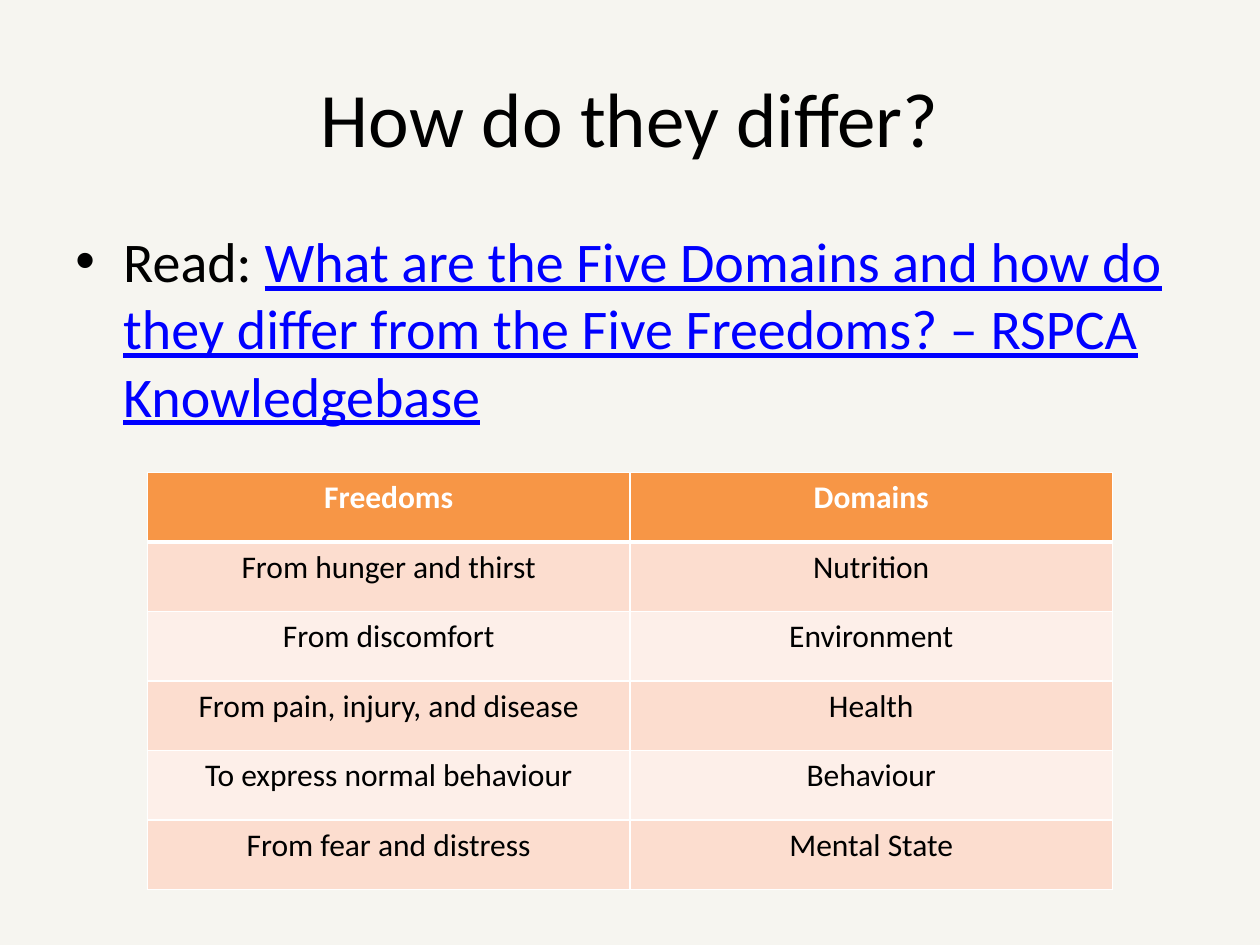
"""Build the slide comparing the Five Freedoms with the Five Domains."""
from dataclasses import dataclass

from lxml import etree
from pptx import Presentation
from pptx.dml.color import RGBColor
from pptx.enum.text import MSO_ANCHOR, PP_ALIGN
from pptx.oxml.ns import qn
from pptx.util import Inches, Pt

LEFT, CENTER = PP_ALIGN.LEFT, PP_ALIGN.CENTER
TOP, MIDDLE = MSO_ANCHOR.TOP, MSO_ANCHOR.MIDDLE

ROWS = [
    ("Freedoms", "Domains"),
    ("From hunger and thirst", "Nutrition"),
    ("From discomfort", "Environment"),
    ("From pain, injury, and disease", "Health"),
    ("To express normal behaviour", "Behaviour"),
    ("From fear and distress", "Mental State"),
]


@dataclass(frozen=True)
class Theme:
    """Colours, font and type sizes of the slide."""
    font: str = "Calibri"
    title: int = 44
    body: int = 32
    cell: int = 18
    background: str = "F6F5F0"
    text: str = "000000"
    link: str = "0000FF"
    white: str = "FFFFFF"
    header: str = "F79646"
    bands: tuple = ("FCDDCF", "FDEFE9")


def add_text(p, text, *, font, size, color, bold=False, underline=False):
    """Append a formatted run to a paragraph."""
    r = p.add_run()
    r.text = text
    r.font.name = font
    r.font.size = Pt(size)
    r.font.bold = bold
    r.font.underline = underline
    r.font.color.rgb = RGBColor.from_string(color)


def add_bullet(p, indent):
    """Give a paragraph a round bullet with a hanging indent."""
    pPr = p._p.get_or_add_pPr()
    pPr.set("marL", str(indent))
    pPr.set("indent", str(-indent))
    etree.SubElement(pPr, qn("a:buFont")).set("typeface", "Arial")
    etree.SubElement(pPr, qn("a:buChar")).set("char", "•")


def set_borders(cell, color, **widths):
    """Draw solid cell borders, with widths in points by side L, R, T and B."""
    tcPr = cell._tc.get_or_add_tcPr()
    for side, width in widths.items():
        ln = etree.SubElement(tcPr, qn(f"a:ln{side}"), w=str(Pt(width)))
        fill = etree.SubElement(ln, qn("a:solidFill"))
        etree.SubElement(fill, qn("a:srgbClr")).set("val", color)


class SlideBuilder:
    """Hold the theme and the current slide, and add elements to it."""

    def __init__(self, prs, theme):
        """Start a blank slide with the theme background."""
        self.theme = theme
        self.s = prs.slides.add_slide(prs.slide_layouts[6])
        fill = self.s.background.fill
        fill.solid()
        fill.fore_color.rgb = RGBColor.from_string(theme.background)

    def text_box(self, x, y, w, h, runs, size, align=LEFT, anchor=TOP, indent=None):
        """Add a one-paragraph box from (text, format) pairs."""
        sp = self.s.shapes.add_textbox(Inches(x), Inches(y), Inches(w), Inches(h))
        tf = sp.text_frame
        tf.word_wrap = True
        tf.vertical_anchor = anchor
        p = tf.paragraphs[0]
        p.alignment = align
        if indent:
            add_bullet(p, Inches(indent))
        for text, style in runs:
            add_text(p, text, font=self.theme.font, size=size,
                     **{"color": self.theme.text, **style})

    def table(self, x, y, w, h, rows):
        """Add a table with a header row and banded body rows."""
        t = self.theme
        table = self.s.shapes.add_table(
            len(rows), len(rows[0]), Inches(x), Inches(y), Inches(w), Inches(h)).table
        for i, row in enumerate(rows):
            is_header = i == 0
            fill = t.header if is_header else t.bands[(i - 1) % 2]
            for j, text in enumerate(row):
                cell = table.cell(i, j)
                set_borders(cell, t.white, L=1, R=1, T=3 if i == 1 else 1,
                            B=3 if is_header else 1)
                cell.fill.solid()
                cell.fill.fore_color.rgb = RGBColor.from_string(fill)
                p = cell.text_frame.paragraphs[0]
                p.alignment = CENTER
                add_text(p, text, font=t.font, size=t.cell, bold=is_header,
                         color=t.white if is_header else t.text)


def main():
    """Build and save the presentation."""
    prs = Presentation()
    prs.slide_width, prs.slide_height = Inches(10), Inches(7.5)
    theme = Theme()
    slide = SlideBuilder(prs, theme)
    slide.text_box(0.5, 0.3, 9, 1.25, [("How do they differ?", {})],
                   theme.title, align=CENTER, anchor=MIDDLE)
    reading = [
        ("Read: ", {}),
        ("What are the Five Domains and how do they differ from the "
         "Five Freedoms? – RSPCA Knowledgebase",
         {"color": theme.link, "underline": True}),
    ]
    slide.text_box(0.5, 1.75, 9, 4.95, reading, theme.body, indent=0.38)
    slide.table(1.17, 3.75, 7.66, 3.31, ROWS)
    prs.save("out.pptx")


if __name__ == "__main__":
    main()
